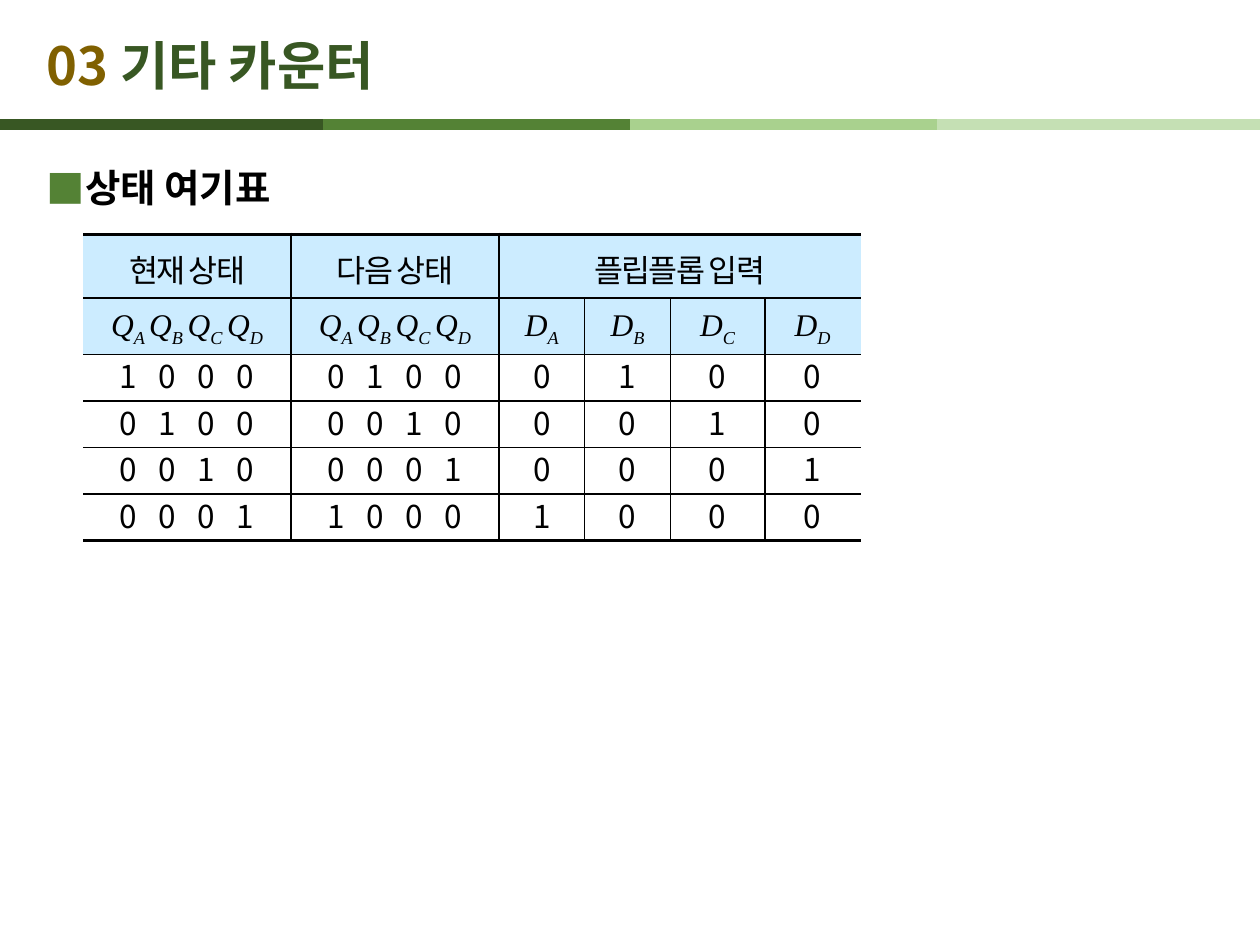
from lxml import etree
from pptx import Presentation
from pptx import util as u
from pptx.dml.color import RGBColor
from pptx.enum import shapes, text
from pptx.oxml.ns import qn

COLORS = {
    "number": "806000", "title": "385723", "bullet": "548235",
    "black": "000000", "header": "CCECFF",
}
BAND_COLORS = ["385723", "548235", "A9D18E", "C5E0B4"]
SANS, SERIF = "Noto Sans CJK KR", "Times New Roman"
WIDTH, HEIGHT = 10, 7.5
STATE_HEADER = [("Q", "A "), ("Q", "B "), ("Q", "C "), ("Q", "D")]
STATES = ["1000", "0100", "0010", "0001"]
COLUMNS = [1.65, 1.65, 0.68, 0.68, 0.75, 0.76]
ROW_HEIGHT = 0.34
THIN, THICK = 1, 2.25


def add(parent, tag, **attributes):
    return etree.SubElement(parent, qn(tag), attributes)


def color(name):
    return RGBColor.from_string(COLORS[name])


def format_run(run, size, name="black", font=SANS, bold=False, italic=False):
    run.font.size = u.Pt(size)
    run.font.bold = bold
    run.font.italic = italic
    run.font.color.rgb = color(name)
    run.font.name = font
    add(run.font._element, "a:ea", typeface=SANS)


def place(shape, box):
    shape.left, shape.top, shape.width, shape.height = map(u.Inches, box)


def add_band(slide, y):
    length = 0.256 * WIDTH
    for share, value in zip((0, 0.256, 0.5, 0.744), BAND_COLORS):
        left = share * WIDTH
        line = slide.shapes.add_connector(
            shapes.MSO_CONNECTOR.STRAIGHT, u.Inches(left), u.Inches(y),
            u.Inches(left + length), u.Inches(y))
        line.line.color.rgb = RGBColor.from_string(value)
        line.line.width = u.Pt(6)
        add(line._element.spPr, "a:effectLst")


def fill_title(title, box):
    place(title, box)
    frame = title.text_frame
    frame.vertical_anchor = text.MSO_ANCHOR.MIDDLE
    paragraph = frame.paragraphs[0]
    paragraph.alignment = text.PP_ALIGN.LEFT
    for words, name in (("03 ", "number"), ("기타 카운터", "title")):
        run = paragraph.add_run()
        run.text = words
        format_run(run, 30, name, bold=True)


def fill_body(body, box):
    place(body, box)
    body.text_frame.text = "상태 여기표"
    paragraph = body.text_frame.paragraphs[0]
    properties = paragraph._p.get_or_add_pPr()
    properties.set("marL", str(u.Inches(0.29)))
    properties.set("indent", str(-u.Inches(0.29)))
    add(add(properties, "a:buClr"), "a:srgbClr", val=COLORS["bullet"])
    add(properties, "a:buFont", typeface=SANS)
    add(properties, "a:buChar", char="■")
    paragraph.line_spacing = 1.5
    paragraph.space_before = u.Pt(0)
    format_run(paragraph.runs[0], 22, bold=True)


def set_borders(cell, widths):
    """Draw left, right, top and bottom edges; a width of 0 hides the edge."""
    properties = cell._tc.get_or_add_tcPr()
    for side, width in zip("LRTB", widths):
        line = add(properties, f"a:ln{side}", w=str(u.Pt(width)))
        if width:
            add(add(line, "a:solidFill"), "a:srgbClr", val=COLORS["black"])
        else:
            add(line, "a:noFill")


def style_cell(cell, row, column, last_row, last_column):
    set_borders(cell, (
        THIN if column else 0,
        THIN if column < last_column else 0,
        THIN if row else THICK,
        THIN if row < last_row else THICK))
    header = row < 2
    if header:
        cell.fill.solid()
        cell.fill.fore_color.rgb = color("header")
    else:
        cell.fill.background()
    cell.vertical_anchor = text.MSO_ANCHOR.MIDDLE
    cell.margin_left = cell.margin_right = u.Inches(0.04)
    cell.margin_top = u.Inches(0.02 if header else 0.04)
    cell.margin_bottom = u.Inches(0.05 if header else 0.04)
    paragraph = cell.text_frame.paragraphs[0]
    paragraph.alignment = text.PP_ALIGN.CENTER
    paragraph.line_spacing = 1.2 if header else 0.8


def write_heading(cell, words):
    paragraph = cell.text_frame.paragraphs[0]
    run = paragraph.add_run()
    run.text = words
    format_run(run, 18, font=SERIF)
    run.font._element.set("spc", "-100")


def write_symbols(cell, symbols):
    """Write italic letters, each with its subscript."""
    paragraph = cell.text_frame.paragraphs[0]
    for letter, subscript in symbols:
        for words, baseline in ((letter, 0), (subscript, -25000)):
            run = paragraph.add_run()
            run.text = words
            format_run(run, 18, font=SERIF, italic=True)
            run.font._element.set("baseline", str(baseline))


def write_bits(cell, bits):
    """Write one centred bit, or several bits on evenly spaced tab stops."""
    paragraph = cell.text_frame.paragraphs[0]
    if len(bits) > 1:
        cell.margin_left = u.Inches(0.29)
        paragraph.alignment = text.PP_ALIGN.LEFT
        stops = add(paragraph._p.get_or_add_pPr(), "a:tabLst")
        for index in range(1, len(bits)):
            add(stops, "a:tab", pos=str(u.Inches(0.31 * index)), algn="l")
    run = paragraph.add_run()
    run.text = "\t".join(bits)
    format_run(run, 18)


def add_state_table(slide, left, top):
    row_count = len(STATES) + 2
    table = slide.shapes.add_table(
        row_count, len(COLUMNS), u.Inches(left), u.Inches(top),
        u.Inches(sum(COLUMNS)), u.Inches(ROW_HEIGHT * row_count)).table
    table.first_row = table.horz_banding = False
    for column, width in zip(table.columns, COLUMNS):
        column.width = u.Inches(width)
    for row in range(row_count):
        for column in range(len(COLUMNS)):
            style_cell(table.cell(row, column), row, column,
                       row_count - 1, len(COLUMNS) - 1)

    table.cell(0, 2).merge(table.cell(0, 5))
    set_heading_edge = table.cell(0, 2)._tc.tcPr.find(qn("a:lnR"))
    set_heading_edge.clear()
    add(set_heading_edge, "a:noFill")
    for column, words in enumerate(("현재 상태", "다음 상태", "플립플롭 입력")):
        write_heading(table.cell(0, column), words)

    headers = [STATE_HEADER] * 2 + [[("D", letter)] for letter in "ABCD"]
    for column, symbols in enumerate(headers):
        write_symbols(table.cell(1, column), symbols)
    for index, state in enumerate(STATES):
        following = STATES[(index + 1) % len(STATES)]
        for column, bits in enumerate((state, following, *following)):
            write_bits(table.cell(index + 2, column), bits)


def main():
    presentation = Presentation()
    presentation.slide_width = u.Inches(WIDTH)
    presentation.slide_height = u.Inches(HEIGHT)
    slide = presentation.slides.add_slide(presentation.slide_layouts[1])
    add_band(slide, 0.132 * HEIGHT)
    fill_title(slide.shapes.title, (0.27, 0.21, 8.27, 0.6))
    fill_body(slide.placeholders[1], (0.27, 1.07, 9.45, 5.98))
    add_state_table(slide, 0.66, 1.86)
    presentation.save("out.pptx")


if __name__ == "__main__":
    main()
